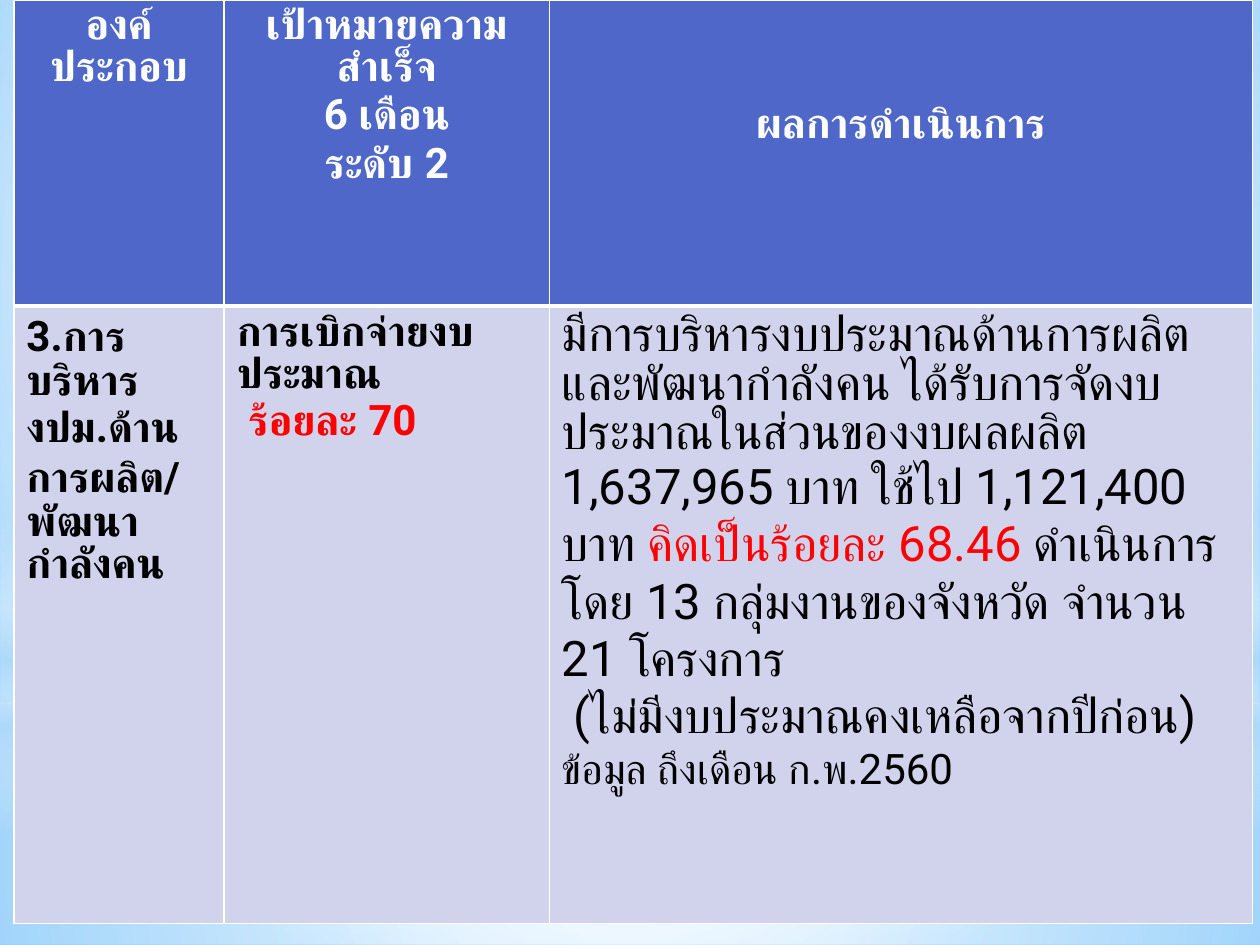
import pptx
import pptx.dml.color
import pptx.enum.shapes
import pptx.enum.text
import pptx.oxml
import pptx.oxml.ns
import pptx.util

Inches = pptx.util.Inches
RGBColor = pptx.dml.color.RGBColor
SHAPE = pptx.enum.shapes.MSO_SHAPE
ALIGN = pptx.enum.text.PP_ALIGN
qn = pptx.oxml.ns.qn

FONT = "Roboto"
WHITE = RGBColor(0xFF, 0xFF, 0xFF)
BLACK = RGBColor(0x00, 0x00, 0x00)
RED = RGBColor(0xFF, 0x00, 0x00)
HEADER_BLUE = RGBColor(0x4E, 0x67, 0xC8)
BODY_LILAC = RGBColor(0xD0, 0xD3, 0xEB)
PALE_BLUE = RGBColor(0xB4, 0xDC, 0xFA)
SKY = RGBColor(0x9E, 0xD5, 0xFF)
DEEP_SKY = RGBColor(0x5B, 0xB9, 0xFF)

# Each paragraph is a list of runs: text, size, colour, bold
HEADERS = [
    [[(text, 24, WHITE, True)] for text in lines]
    for lines in (
        ["องค์", "ประกอบ"],
        ["เป้าหมายความสำเร็จ", "6 เดือน", "ระดับ 2"],
        ["ผลการดำเนินการ"],
    )
]
BODY = [
    [
        [("3.การบริหาร", 24, BLACK, True)],
        [("งปม.ด้านการผลิต/พัฒนากำลังคน", 24, BLACK, True)],
    ],
    [
        [("การเบิกจ่ายงบประมาณ", 24, BLACK, True)],
        [(" ", 24, BLACK, True), ("ร้อยละ 70", 24, RED, True)],
    ],
    [
        [
            ("มีการบริหารงบประมาณด้านการผลิตและพัฒนากำลังคน ได้รับการจัด"
             "งบประมาณในส่วนของงบผลผลิต 1,637,965 บาท ใช้ไป 1,121,400 บาท ",
             28, BLACK, False),
            ("คิดเป็นร้อยละ 68.46 ", 28, RED, False),
            ("ดำเนินการโดย 13 กลุ่มงานของจังหวัด จำนวน 21 โครงการ", 28, BLACK, False),
        ],
        [
            (" (ไม่มีงบประมาณคงเหลือจากปีก่อน) ", 28, BLACK, False),
            ("ข้อมูล ถึงเดือน ก.พ.2560", 24, BLACK, False),
        ],
    ],
]


def set_gradient(parent, stops, center=None, angle=0):
    """Swap the solid fill in parent for a gradient of (position, colour, opacity) stops.

    center gives the left, top, right, bottom insets of a circular gradient.
    """
    gs = "".join(
        f'<a:gs pos="{pos * 1000}"><a:srgbClr val="{color}">'
        f'<a:alpha val="{opacity * 1000}"/></a:srgbClr></a:gs>'
        for pos, color, opacity in stops
    )
    if center:
        l, t, r, b = (inset * 1000 for inset in center)
        direction = (f'<a:path path="circle"><a:fillToRect l="{l}" t="{t}" '
                     f'r="{r}" b="{b}"/></a:path>')
    else:
        direction = f'<a:lin ang="{angle * 60000}" scaled="0"/>'
    grad = pptx.oxml.parse_xml(
        f'<a:gradFill {pptx.oxml.ns.nsdecls("a")} rotWithShape="1">'
        f"<a:gsLst>{gs}</a:gsLst>{direction}</a:gradFill>"
    )
    parent.replace(parent.find(qn("a:solidFill")), grad)


def add_glow(s, kind, box, stops, **direction):
    sp = s.shapes.add_shape(kind, *(Inches(v) for v in box))
    sp.shadow.inherit = False
    sp.line.fill.background()
    sp.fill.solid()
    sp.fill.fore_color.rgb = WHITE
    set_gradient(sp.element.spPr, stops, **direction)


def add_backdrop(s, width, height):
    fill = s.background.fill
    fill.solid()
    fill.fore_color.rgb = WHITE
    set_gradient(next(s.element.iter(qn("p:bgPr"))),
                 [(0, SKY, 100), (60, WHITE, 100), (100, DEEP_SKY, 100)],
                 center=(20, 10, 20, 60))
    middle = (50, 50, 50, 50)
    horizon = 5.58
    add_glow(s, SHAPE.RECTANGLE, (0, horizon, width, height - horizon),
             [(0, WHITE, 91), (37, WHITE, 76), (100, PALE_BLUE, 79)], center=middle)
    add_glow(s, SHAPE.RECTANGLE, (0, 0, width, horizon),
             [(0, WHITE, 89), (48, WHITE, 62), (100, PALE_BLUE, 79)], center=middle)
    add_glow(s, SHAPE.RECTANGLE, (0, 4.12, width, 2.5),
             [(0, WHITE, 0), (29, WHITE, 30), (45, PALE_BLUE, 40),
              (55, WHITE, 26), (65, PALE_BLUE, 60), (100, WHITE, 0)], angle=90)
    add_glow(s, SHAPE.OVAL, (0, 1.75, width, horizon),
             [(0, WHITE, 100), (56, WHITE, 0)], center=middle)


def set_borders(cell, **widths):
    """Draw white cell borders; widths maps L, R, T, B to points."""
    tcPr = cell._tc.get_or_add_tcPr()
    for i, side in enumerate("LRTB"):
        tcPr.insert(i, pptx.oxml.parse_xml(
            f'<a:ln{side} {pptx.oxml.ns.nsdecls("a")} w="{pptx.util.Pt(widths[side])}">'
            f'<a:solidFill><a:srgbClr val="{WHITE}"/></a:solidFill></a:ln{side}>'
        ))


def fill_cell(cell, paragraphs, color, align):
    cell.fill.solid()
    cell.fill.fore_color.rgb = color
    tf = cell.text_frame
    for i, runs in enumerate(paragraphs):
        p = tf.add_paragraph() if i else tf.paragraphs[0]
        p.alignment = align
        for text, size, font_color, bold in runs:
            r = p.add_run()
            r.text = text
            r.font.name = FONT
            r.font.size = pptx.util.Pt(size)
            r.font.bold = bold
            r.font.color.rgb = font_color


def add_results_table(s, left, top, col_widths, row_heights):
    table = s.shapes.add_table(
        len(row_heights), len(col_widths), Inches(left), Inches(top),
        Inches(sum(col_widths)), Inches(sum(row_heights))).table
    for col, width in zip(table.columns, col_widths):
        col.width = Inches(width)
    for row, height in zip(table.rows, row_heights):
        row.height = Inches(height)
    for i, (header, body) in enumerate(zip(HEADERS, BODY)):
        fill_cell(table.cell(0, i), header, HEADER_BLUE, ALIGN.CENTER)
        set_borders(table.cell(0, i), L=1, R=1, T=1, B=3)
        fill_cell(table.cell(1, i), body, BODY_LILAC, ALIGN.LEFT)
        set_borders(table.cell(1, i), L=1, R=1, T=3, B=1)
    table.cell(0, 2).margin_top = Inches(0.83)


def main():
    prs = pptx.Presentation()
    width, height = 10, 7.5
    prs.slide_width, prs.slide_height = Inches(width), Inches(height)
    s = prs.slides.add_slide(prs.slide_layouts[6])
    add_backdrop(s, width, height)
    add_results_table(s, 0.11, 0, (1.67, 2.58, 5.58), (2.43, 4.9))
    prs.save("out.pptx")


if __name__ == "__main__":
    main()
